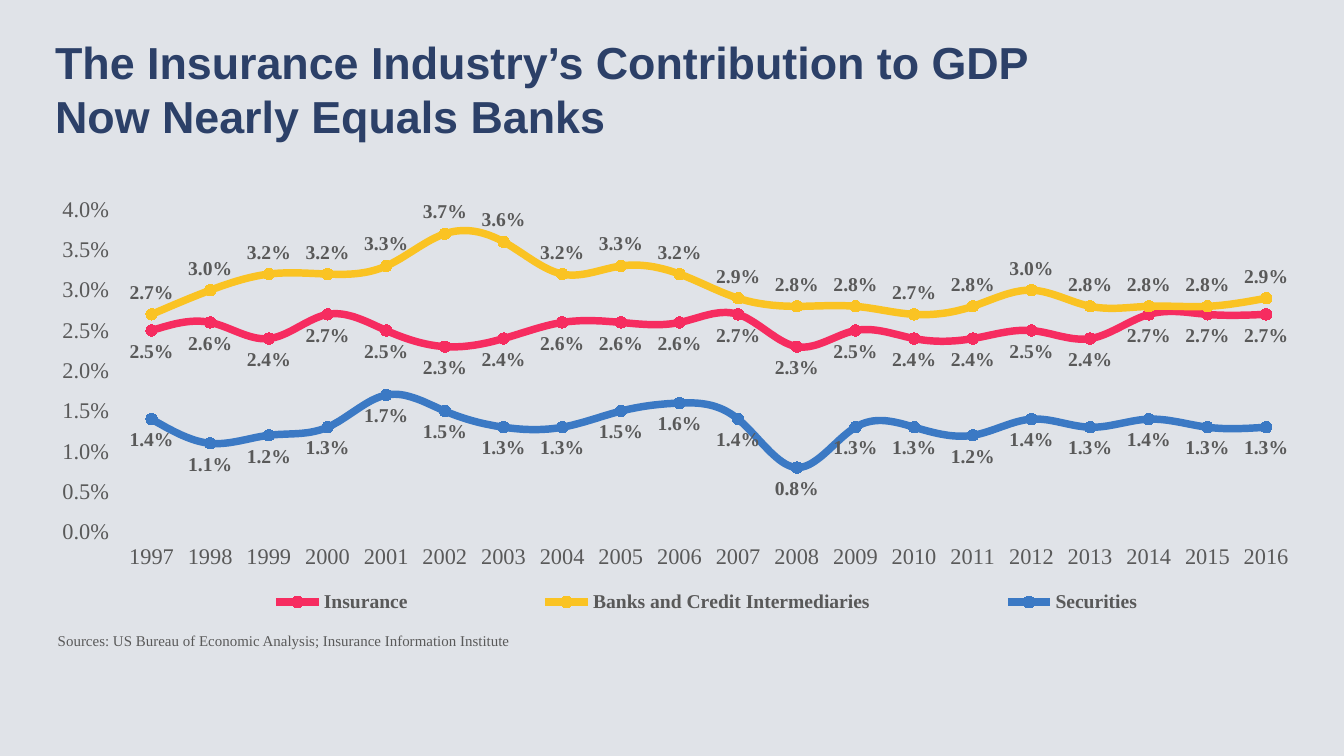
from pptx import Presentation
from pptx.chart.data import CategoryChartData
from pptx.dml.color import RGBColor
from pptx.enum.chart import (XL_CHART_TYPE, XL_LABEL_POSITION as LABEL_POS,
                             XL_LEGEND_POSITION, XL_MARKER_STYLE, XL_TICK_MARK)
from pptx.oxml import parse_xml
from pptx.oxml.ns import nsdecls, qn
from pptx.util import Inches, Pt

BACKGROUND = RGBColor(0xE0, 0xE3, 0xE8)
NAVY = RGBColor(0x2C, 0x40, 0x68)
GRAY = RGBColor(0x59, 0x59, 0x59)
PINK = RGBColor(0xF6, 0x2C, 0x60)
YELLOW = RGBColor(0xFA, 0xC3, 0x23)
BLUE = RGBColor(0x3B, 0x79, 0xC4)
SERIF = "Times New Roman"

TITLE = ["The Insurance Industry’s Contribution to GDP", "Now Nearly Equals Banks"]
SOURCE = "Sources: US Bureau of Economic Analysis; Insurance Information Institute"
YEARS = [str(year) for year in range(1997, 2017)]
# name, percent of GDP by year, colour, label position
SECTORS = [
    ("Insurance",
     [2.5, 2.6, 2.4, 2.7, 2.5, 2.3, 2.4, 2.6, 2.6, 2.6,
      2.7, 2.3, 2.5, 2.4, 2.4, 2.5, 2.4, 2.7, 2.7, 2.7], PINK, LABEL_POS.BELOW),
    ("Banks and Credit Intermediaries",
     [2.7, 3.0, 3.2, 3.2, 3.3, 3.7, 3.6, 3.2, 3.3, 3.2,
      2.9, 2.8, 2.8, 2.7, 2.8, 3.0, 2.8, 2.8, 2.8, 2.9], YELLOW, LABEL_POS.ABOVE),
    ("Securities",
     [1.4, 1.1, 1.2, 1.3, 1.7, 1.5, 1.3, 1.3, 1.5, 1.6,
      1.4, 0.8, 1.3, 1.3, 1.2, 1.4, 1.3, 1.4, 1.3, 1.3], BLUE, LABEL_POS.BELOW),
]
CHART_W, CHART_H = 9.33, 3.48


def style_font(font, size, color=GRAY, name=SERIF, bold=False):
    font.size, font.name, font.bold = Pt(size), name, bold
    font.color.rgb = color


def add_text_box(slide, x, y, w, h):
    """Add a wrapping box without margins and return its first paragraph."""
    tf = slide.shapes.add_textbox(Inches(x), Inches(y), Inches(w), Inches(h)).text_frame
    tf.word_wrap = True
    tf.margin_left = tf.margin_right = tf.margin_top = tf.margin_bottom = 0
    return tf.paragraphs[0]


def place(element, index, x, y, w, h, target=""):
    """Give a chart part a fixed layout, in inches from the chart's corner."""
    for old in element.findall(qn("c:layout")):
        element.remove(old)
    fractions = (x / CHART_W, y / CHART_H, w / CHART_W, h / CHART_H)
    parts = f'<c:layoutTarget val="{target}"/>' if target else ""
    parts += '<c:xMode val="edge"/><c:yMode val="edge"/>'
    parts += "".join(f'<c:{tag} val="{val:.4f}"/>' for tag, val in zip("xywh", fractions))
    element.insert(index, parse_xml(
        f'<c:layout {nsdecls("c")}><c:manualLayout>{parts}</c:manualLayout></c:layout>'))


def add_gdp_chart(slide):
    data = CategoryChartData(number_format="0.0%")
    data.categories = YEARS
    for name, percents, _, _ in SECTORS:
        data.add_series(name, [round(v / 100, 3) for v in percents])
    chart = slide.shapes.add_chart(
        XL_CHART_TYPE.LINE_MARKERS, Inches(0.35), Inches(1.22),
        Inches(CHART_W), Inches(CHART_H), data).chart
    chart.has_title = False
    style_font(chart.font, 12)

    for axis in (chart.category_axis, chart.value_axis):
        axis.has_major_gridlines = False
        axis.major_tick_mark = XL_TICK_MARK.OUTSIDE
        axis.format.line.fill.background()
        style_font(axis.tick_labels.font, 12)
    axis = chart.value_axis
    axis.minimum_scale, axis.maximum_scale, axis.major_unit = 0, 0.04, 0.005
    axis.tick_labels.number_format = "0.0%"
    axis.tick_labels.number_format_is_linked = False

    plot = chart.plots[0]
    plot.vary_by_categories = False
    for series, (_, _, color, position) in zip(plot.series, SECTORS):
        series.smooth = True
        series.format.line.color.rgb = color
        series.format.line.width = Pt(4)
        marker = series.marker
        marker.style, marker.size = XL_MARKER_STYLE.CIRCLE, 6
        marker.format.fill.solid()
        marker.format.fill.fore_color.rgb = color
        marker.format.line.color.rgb = color
        labels = series.data_labels
        labels.show_value = True
        labels.position = position
        labels.number_format = "0.0%"
        labels.number_format_is_linked = False
        style_font(labels.font, 10.5, bold=True)

    chart.has_legend = True
    legend = chart.legend
    legend.position = XL_LEGEND_POSITION.TOP
    legend.include_in_layout = False
    style_font(legend.font, 10.5, bold=True)
    place(legend._element, 1, 0.73, 3.14, 8.36, 0.24)
    place(plot._element.getparent(), 0, 0.56, 0.34, 8.73, 2.4, "inner")


prs = Presentation()
prs.slide_width = Inches(10)
prs.slide_height = prs.slide_width * 9 // 16
slide = prs.slides.add_slide(prs.slide_layouts[6])
slide.background.fill.solid()
slide.background.fill.fore_color.rgb = BACKGROUND

add_gdp_chart(slide)

p = add_text_box(slide, 0.41, 0.26, 9.18, 0.57)
for i, line in enumerate(TITLE):
    if i:
        p.add_line_break()
    r = p.add_run()
    r.text = line
    style_font(r.font, 24, NAVY, "Arial", True)

p = add_text_box(slide, 0.43, 4.7, 8.4, 0.34)
r = p.add_run()
r.text = SOURCE
style_font(r.font, 8)

prs.save("out.pptx")
